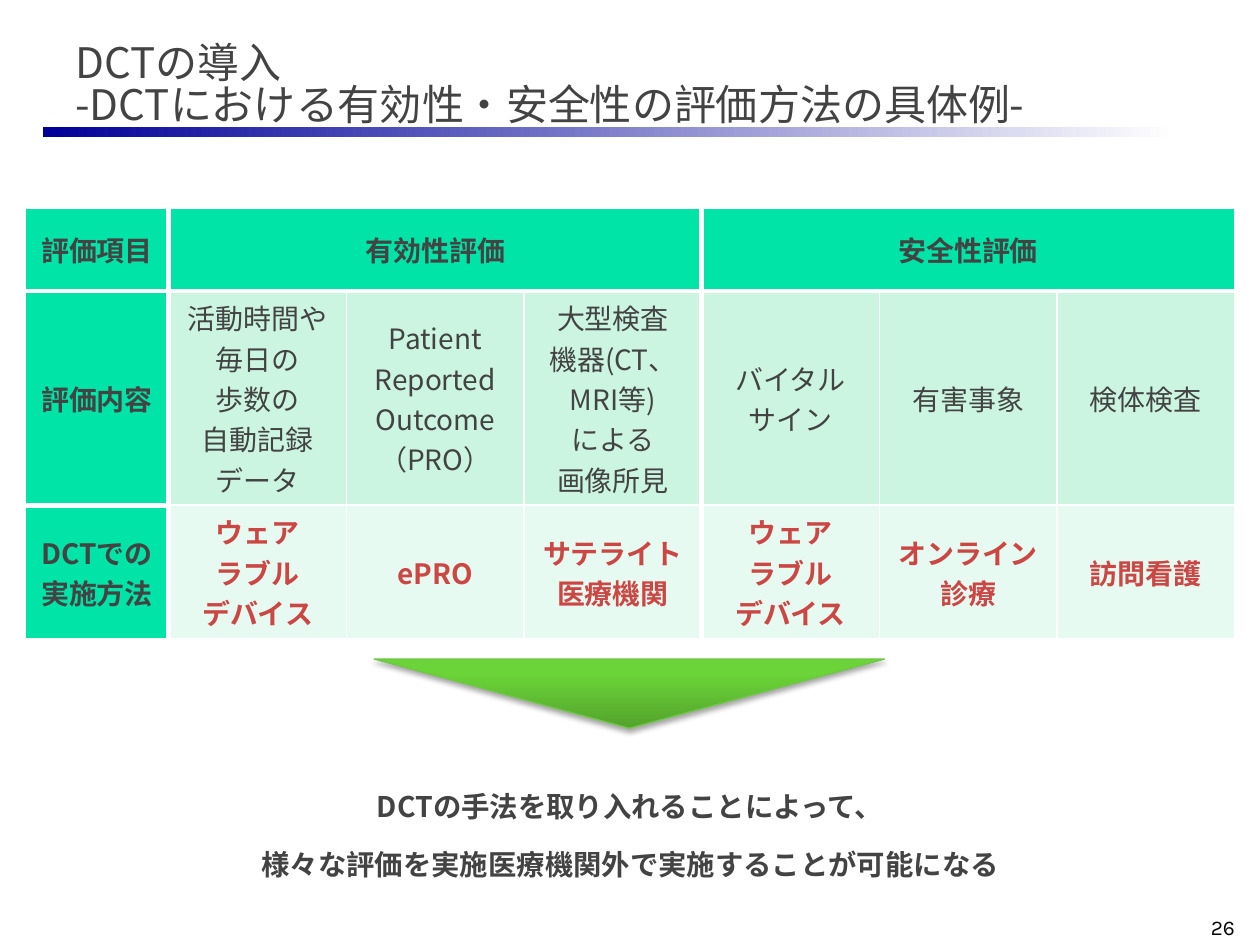
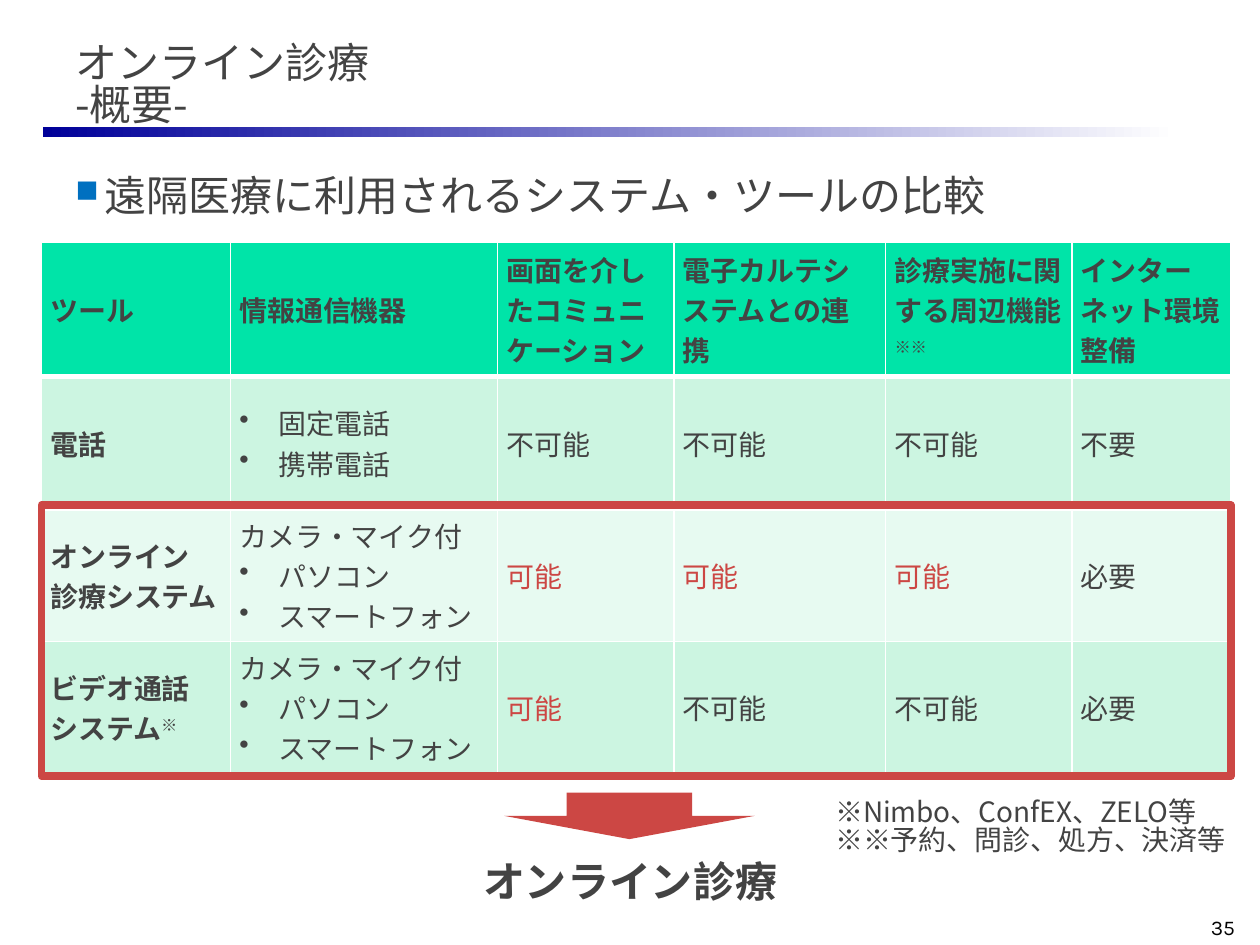
from lxml.etree import SubElement
from pptx import Presentation
from pptx.dml.color import RGBColor
from pptx.enum.shapes import MSO_SHAPE as Shape
from pptx.enum.text import MSO_ANCHOR as Anchor, PP_ALIGN as Align
from pptx.oxml.ns import qn
from pptx.util import Emu, Pt

PX = 9144  # EMU; 100 px make an inch
WHITE = RGBColor(0xFF, 0xFF, 0xFF)
NAVY = RGBColor(0x00, 0x00, 0x99)
TEXT = RGBColor(0x43, 0x43, 0x43)
BLACK = RGBColor(0x04, 0x04, 0x04)
RED = RGBColor(0xCC, 0x47, 0x44)
BLUE = RGBColor(0x00, 0x70, 0xC0)
HEADER = RGBColor(0x00, 0xE4, 0xA8)
MINT = RGBColor(0xCC, 0xF5, 0xE1)
PALE_MINT = RGBColor(0xE7, 0xFA, 0xF1)
GREEN = RGBColor(0x6B, 0xD4, 0x38)
DARK_GREEN = RGBColor(0x53, 0xA3, 0x2B)
GREEN_LINE = RGBColor(0x71, 0xC7, 0x47)
BODY_FONT = "Noto Sans CJK JP"
NUMBER_FONT = "Karla"
TIGHT = 0.83


def px(*lengths):
    return [Emu(length * PX) for length in lengths]


def add_bullet(paragraph, character, left, hanging, color=None, size=100):
    properties = paragraph._p.get_or_add_pPr()
    properties.set("marL", str(left * PX))
    properties.set("indent", str(-hanging * PX))
    bullet = []
    if color is not None:
        bullet.append(SubElement(properties, qn("a:buClr")))
        SubElement(bullet[0], qn("a:srgbClr"), val=str(color))
    bullet.append(SubElement(properties, qn("a:buSzPct"), val=str(size * 1000)))
    bullet.append(SubElement(properties, qn("a:buChar"), char=character))
    defaults = properties.find(qn("a:defRPr"))
    for element in bullet:
        defaults.addprevious(element)


def set_borders(cell, widths):
    """Draw white borders; widths are points for left, right, top, bottom."""
    properties = cell._tc.get_or_add_tcPr()
    for side, width in zip("LRTB", widths):
        line = SubElement(properties, qn(f"a:ln{side}"), w=str(Pt(width)))
        fill = SubElement(line, qn("a:solidFill"))
        SubElement(fill, qn("a:srgbClr"), val=str(WHITE))


def set_gradient(shape, angle, *stops):
    shape.fill.gradient()
    shape.fill.gradient_angle = angle
    for stop, (position, color) in zip(shape.fill.gradient_stops, stops):
        stop.position = position
        stop.color.rgb = color


class Deck:
    def __init__(self):
        self.presentation = Presentation()
        self.presentation.slide_width, self.presentation.slide_height = px(1000, 750)
        self.slide = None

    def add_slide(self, title, number):
        layout = self.presentation.slide_layouts[6]
        self.slide = self.presentation.slides.add_slide(layout)
        band = self.shape(Shape.RECTANGLE, 34, 101, 900, 8)
        set_gradient(band, 0, (0, NAVY), (1, WHITE))
        self.text(title, 50, 17, 852, 90, size=24, anchor=Anchor.BOTTOM, spacing=TIGHT)
        self.text(str(number), 782, 718, 208, 33, size=12, anchor=Anchor.BOTTOM,
                  align=Align.RIGHT, color=BLACK, font=NUMBER_FONT)

    def style(self, paragraph, size, color=TEXT, bold=False, align=Align.LEFT,
              font=BODY_FONT, spacing=1.0):
        paragraph.alignment = align
        paragraph.line_spacing = spacing
        paragraph.font.size = Pt(size)
        paragraph.font.bold = bold
        paragraph.font.color.rgb = color
        paragraph.font.name = font
        defaults = paragraph._p.pPr.find(qn("a:defRPr"))
        SubElement(defaults, qn("a:ea"), typeface=font)

    def run(self, paragraph, text, superscript=False):
        run = paragraph.add_run()
        run.text = text
        if superscript:
            run._r.get_or_add_rPr().set("baseline", "30000")

    def paragraphs(self, frame, count):
        return [frame.paragraphs[0]] + [frame.add_paragraph() for _ in range(count - 1)]

    def text(self, text, left, top, width, height, anchor=Anchor.TOP,
             superscript=False, **style):
        frame = self.slide.shapes.add_textbox(*px(left, top, width, height)).text_frame
        frame.word_wrap = True
        frame.vertical_anchor = anchor
        lines = text.split("\n")
        for paragraph, line in zip(self.paragraphs(frame, len(lines)), lines):
            self.run(paragraph, line, superscript)
            self.style(paragraph, **style)
        return frame

    def shape(self, kind, left, top, width, height, fill=None, line=None, line_width=1):
        shape = self.slide.shapes.add_shape(kind, *px(left, top, width, height))
        shape.shadow.inherit = False
        if fill is None:
            shape.fill.background()
        else:
            shape.fill.solid()
            shape.fill.fore_color.rgb = fill
        if line is None:
            shape.line.fill.background()
        else:
            shape.line.color.rgb = line
            shape.line.width = Pt(line_width)
        return shape

    def drop_shadow(self, shape):
        effects = shape._element.spPr.find(qn("a:effectLst"))
        shadow = SubElement(effects, qn("a:outerShdw"), blurRad=str(Pt(3.1)),
                            dist=str(Pt(1.8)), dir="5400000", rotWithShape="0")
        color = SubElement(shadow, qn("a:srgbClr"), val="000000")
        SubElement(color, qn("a:alpha"), val="35000")

    def cell_text(self, cell, text, **style):
        """Fill a cell; "•" starts a bulleted line and closing "※" are raised."""
        cell.vertical_anchor = Anchor.MIDDLE
        lines = text.split("\n")
        for paragraph, line in zip(self.paragraphs(cell.text_frame, len(lines)), lines):
            words = line.lstrip("•").rstrip("※")
            self.run(paragraph, words)
            if line.endswith("※"):
                self.run(paragraph, "※" * line.count("※"), superscript=True)
            self.style(paragraph, 16, **style)
            if line.startswith("•"):
                add_bullet(paragraph, "•", 31, 31)

    def table(self, rows, left, top, widths, heights, fill_of, is_red, margins,
              align=Align.LEFT, red_bold=False, spans=(), thick_columns=(),
              thick_rows=(), thick_label_rows=()):
        """Add a table; thick_* name the grid lines that are 3 points wide."""
        table = self.slide.shapes.add_table(
            len(rows), len(widths), *px(left, top, sum(widths), sum(heights))).table
        for column, width in zip(table.columns, px(*widths)):
            column.width = width
        for row, height in zip(table.rows, px(*heights)):
            row.height = height
        for r, texts in enumerate(rows):
            wide_rows = set(thick_rows)
            for c, text in enumerate(texts):
                cell = table.cell(r, c)
                wide_rows = {*thick_rows, *(thick_label_rows if c == 0 else ())}
                set_borders(cell, [3 if edge in wide else 1 for edge, wide in (
                    (c, thick_columns), (c + 1, thick_columns),
                    (r, wide_rows), (r + 1, wide_rows))])
                cell.fill.solid()
                cell.fill.fore_color.rgb = fill_of(r, c)
                horizontal, vertical = px(*margins)
                cell.margin_left = cell.margin_right = horizontal
                cell.margin_top = cell.margin_bottom = vertical
                if text:
                    red = is_red(r, c)
                    self.cell_text(cell, text, align=align, color=RED if red else TEXT,
                                   bold=r == 0 or c == 0 or (red and red_bold))
        for r, first, last in spans:
            table.cell(r, first).merge(table.cell(r, last))


def add_evaluation_slide(deck):
    deck.add_slide("DCTの導入\n-DCTにおける有効性・安全性の評価方法の具体例-", 26)
    arrow = deck.shape(Shape.FLOWCHART_MERGE, 297, 523, 405, 55,
                       line=GREEN_LINE, line_width=0.75)
    set_gradient(arrow, 90, (0, DARK_GREEN), (0.8, GREEN))
    deck.drop_shadow(arrow)
    deck.text("DCTの手法を取り入れることによって、\n"
              "様々な評価を実施医療機関外で実施することが可能になる",
              143, 618, 714, 100, anchor=Anchor.MIDDLE, superscript=True,
              size=28, bold=True, align=Align.CENTER)
    rows = [
        ["評価項目", "有効性評価", "", "", "安全性評価", "", ""],
        ["評価内容", "活動時間や\n毎日の\n歩数の\n自動記録\nデータ",
         "Patient Reported Outcome（PRO）",
         "大型検査\n機器(CT、\nMRI等)\nによる\n画像所見",
         "バイタル\nサイン", "有害事象", "検体検査"],
        ["DCTでの\n実施方法", "ウェア\nラブル\nデバイス", "ePRO",
         "サテライト\n医療機関", "ウェア\nラブル\nデバイス",
         "オンライン\n診療", "訪問看護"],
    ]
    body_fills = [HEADER, MINT, PALE_MINT]
    deck.table(rows, 20, 165, [114] + [141] * 6, [66, 170, 106],
               fill_of=lambda r, c: HEADER if c == 0 else body_fills[r],
               is_red=lambda r, c: r == 2 and c > 0, red_bold=True,
               margins=(10, 5), align=Align.CENTER, spans=[(0, 1, 3), (0, 4, 6)],
               thick_columns=(1, 4), thick_rows=(1,), thick_label_rows=(2,))


def add_online_care_slide(deck):
    deck.add_slide("オンライン診療\n-概要-", 35)
    heading = deck.text("遠隔医療に利用されるシステム・ツールの比較",
                        50, 130, 900, 60, size=24).paragraphs[0]
    add_bullet(heading, "■", 23, 23, BLUE, 75)
    devices = "カメラ・マイク付\n•パソコン\n•スマートフォン"
    rows = [
        ["ツール", "情報通信機器", "画面を介したコミュニケーション",
         "電子カルテシステムとの連携", "診療実施に関する周辺機能※※",
         "インターネット環境整備"],
        ["電話", "•固定電話\n•携帯電話", "不可能", "不可能", "不可能", "不要"],
        ["オンライン\n診療システム", devices, "可能", "可能", "可能", "必要"],
        ["ビデオ通話\nシステム※", devices, "可能", "不可能", "不可能", "必要"],
    ]
    row_fills = [HEADER, MINT, PALE_MINT, MINT]
    deck.table(rows, 33, 192, [150, 212, 140, 168, 148, 126], [107, 105, 105, 105],
               fill_of=lambda r, c: row_fills[r],
               is_red=lambda r, c: rows[r][c] == "可能",
               margins=(7, 0), thick_rows=(1, 2))
    deck.text("※Nimbo、ConfEX、ZELO等\n※※予約、問診、処方、決済等",
              653, 630, 334, 64, size=16, spacing=TIGHT)
    deck.shape(Shape.DOWN_ARROW, 400, 629, 199, 37, fill=RED)
    deck.text("オンライン診療", 364, 681, 272, 50, size=24, bold=True,
              align=Align.CENTER, spacing=TIGHT)
    deck.shape(Shape.RECTANGLE, 33, 401, 944, 215, line=RED, line_width=4.5)


def main():
    deck = Deck()
    add_evaluation_slide(deck)
    add_online_care_slide(deck)
    deck.presentation.save("out.pptx")


if __name__ == "__main__":
    main()
